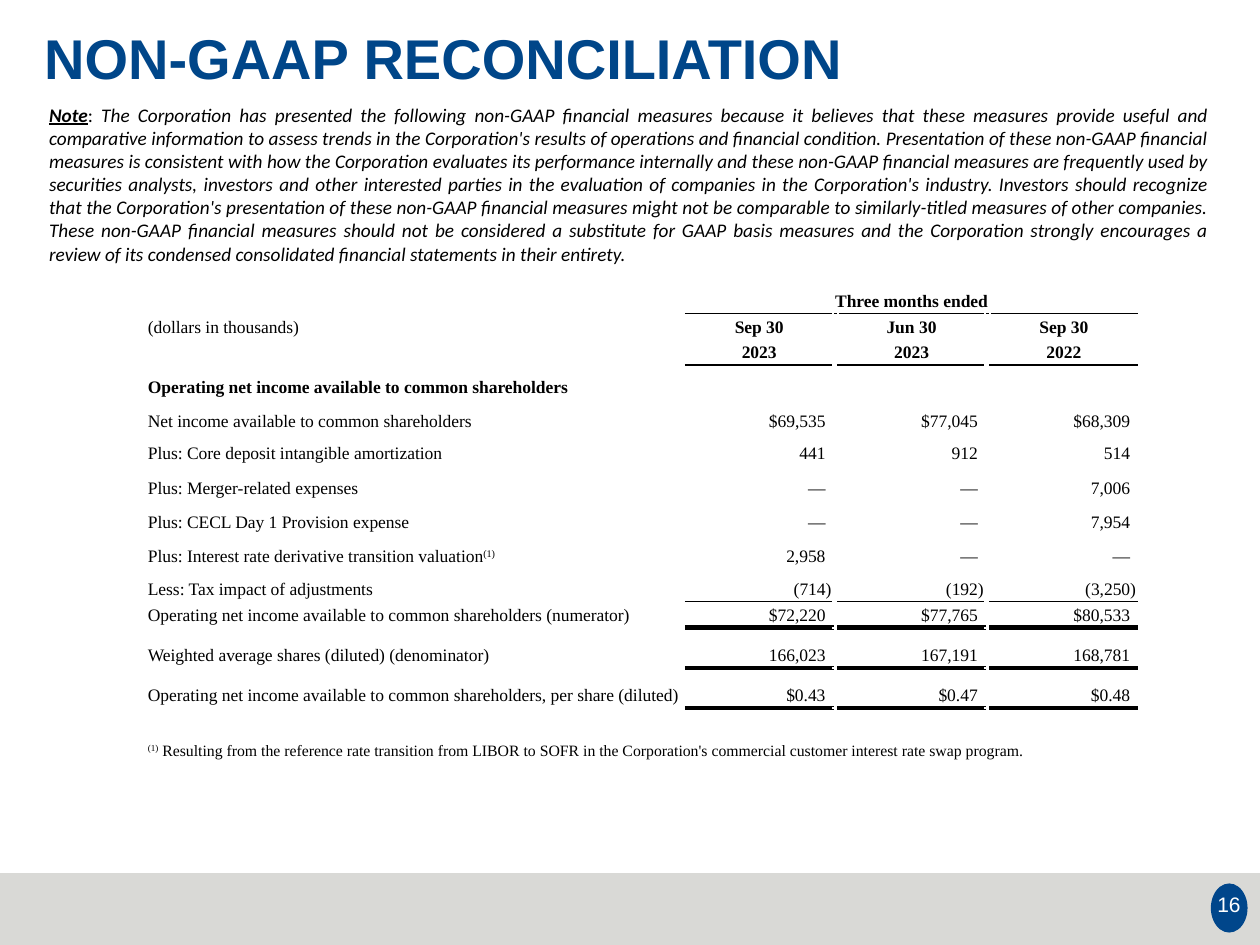
"""Builds the non-GAAP reconciliation slide with its table and footer."""
import pptx
import pptx.dml.color
import pptx.enum.shapes
import pptx.enum.text
import pptx.oxml
import pptx.oxml.ns
import pptx.util
from dataclasses import dataclass

Cm = pptx.util.Cm
Pt = pptx.util.Pt
ALIGN = pptx.enum.text.PP_ALIGN
ANCHOR = pptx.enum.text.MSO_ANCHOR
SHAPE = pptx.enum.shapes.MSO_SHAPE


@dataclass(frozen=True)
class Theme:
    title: str = "004689"
    badge: str = "00468B"
    footer: str = "D9D9D6"
    white: str = "FFFFFF"
    black: str = "000000"
    title_size: float = 32
    number_size: float = 12
    note_size: float = 11
    table_size: float = 10
    footnote_size: float = 9
    spacer_size: int = 1


THEME = Theme()


def add_run(p, text, face, size, color=THEME.black, bold=False, italic=False, underline=False, raised=False):
    """Append one formatted run to a paragraph."""
    r = p.add_run()
    r.text = text
    font = r.font
    font.name, font.size = face, Pt(size)
    font.bold, font.italic, font.underline = bold, italic, underline
    font.color.rgb = pptx.dml.color.RGBColor.from_string(color)
    if raised:
        r._r.get_or_add_rPr().set("baseline", "30000")


def add_box(s, left, top, width, height, align, anchor=ANCHOR.TOP):
    """Add a wrapping text box and return its first paragraph."""
    tf = s.shapes.add_textbox(Cm(left), Cm(top), Cm(width), Cm(height)).text_frame
    tf.word_wrap = True
    tf.vertical_anchor = anchor
    tf.margin_left = tf.margin_right = tf.margin_bottom = Cm(0.25)
    tf.margin_top = Cm(0.15)
    p = tf.paragraphs[0]
    p.alignment = align
    return p


prs = pptx.Presentation()
prs.slide_width, prs.slide_height = Cm(25.4), Cm(19.05)
s = prs.slides.add_slide(prs.slide_layouts[6])

for kind, color, left, top, width, height in [
    (SHAPE.RECTANGLE, THEME.footer, 0, 17.6, 25.4, 1.45),
    (SHAPE.OVAL, THEME.badge, 24.41, 17.81, 0.74, 0.99),
]:
    sp = s.shapes.add_shape(kind, Cm(left), Cm(top), Cm(width), Cm(height))
    sp.shadow.inherit = False
    sp.fill.solid()
    sp.fill.fore_color.rgb = pptx.dml.color.RGBColor.from_string(color)
    sp.line.fill.background()

p = add_box(s, 0.64, 0.48, 24.56, 2.9, ALIGN.LEFT)
p.line_spacing = 0.9
add_run(p, "NON-GAAP RECONCILIATION", "Arial", THEME.title_size, THEME.title, bold=True)

p = add_box(s, 24.18, 17.78, 1.19, 0.99, ALIGN.CENTER, ANCHOR.MIDDLE)
add_run(p, "16", "Arial", THEME.number_size, THEME.white)

NOTE_SENTENCES = [
    "The Corporation has presented the following non-GAAP financial measures because it believes that these "
    "measures provide useful and comparative information to assess trends in the Corporation's results of "
    "operations and financial condition.",
    "Presentation of these non-GAAP financial measures is consistent with how the Corporation evaluates its "
    "performance internally and these non-GAAP financial measures are frequently used by securities analysts, "
    "investors and other interested parties in the evaluation of companies in the Corporation's industry.",
    "Investors should recognize that the Corporation's presentation of these non-GAAP financial measures might "
    "not be comparable to similarly-titled measures of other companies.",
    "These non-GAAP financial measures should not be considered a substitute for GAAP basis measures and the "
    "Corporation strongly encourages a review of its condensed consolidated financial statements in their "
    "entirety.",
]
p = add_box(s, 0.74, 1.93, 23.9, 3.56, ALIGN.JUSTIFY)
add_run(p, "Note", "Calibri", THEME.note_size, bold=True, italic=True, underline=True)
add_run(p, ": ", "Calibri", THEME.note_size)
add_run(p, " ".join(NOTE_SENTENCES), "Calibri", THEME.note_size, italic=True)

OPERATING = "Operating net income available to common shareholders"
MARK = "(1)"
FOOTNOTE = (
    " Resulting from the reference rate transition from LIBOR to SOFR in the Corporation's "
    "commercial customer interest rate swap program."
)
ROWS = [
    (0.66, "", ["Three months ended", "", ""]),
    (0.53, "(dollars in thousands)", ["Sep 30", "Jun 30", "Sep 30"]),
    (0.51, "", ["2023", "2023", "2022"]),
    (0.69, OPERATING, ["", "", ""]),
    (0.69, "Net income available to common shareholders", ["$69,535", "$77,045", "$68,309"]),
    (0.66, "Plus: Core deposit intangible amortization", ["441", "912", "514"]),
    (0.69, "Plus: Merger-related expenses", ["—", "—", "7,006"]),
    (0.69, "Plus: CECL Day 1 Provision expense", ["—", "—", "7,954"]),
    (0.69, "Plus: Interest rate derivative transition valuation" + MARK, ["2,958", "—", "—"]),
    (0.66, "Less: Tax impact of adjustments", ["(714)", "(192)", "(3,250)"]),
    (0.53, OPERATING + " (numerator)", ["$72,220", "$77,765", "$80,533"]),
    (0.28, "", ["", "", ""]),
    (0.53, "Weighted average shares (diluted) (denominator)", ["166,023", "167,191", "168,781"]),
    (0.28, "", ["", "", ""]),
    (0.53, OPERATING + ", per share (diluted)", ["$0.43", "$0.47", "$0.48"]),
    (0.23, "", ["", "", ""]),
    (0.86, MARK + FOOTNOTE, ["", "", ""]),
]
COL_WIDTHS = [10.92] + [2.97, 0.1, 2.97, 0.1, 2.97]
HEADER_ROWS = 3
BOLD_ROWS = range(HEADER_ROWS + 1)
RULES = {0: 1, 2: 1, 9: 1, 10: 3, 12: 3, 14: 3}

heights = [row[0] for row in ROWS]
frame = s.shapes.add_table(len(ROWS), len(COL_WIDTHS), Cm(2.9), Cm(5.66), Cm(sum(COL_WIDTHS)), Cm(sum(heights)))
table = frame.table
table.first_row = table.horz_banding = False
for column, width in zip(table.columns, COL_WIDTHS):
    column.width = Cm(width)
for row, height in zip(table.rows, heights):
    row.height = Cm(height)
table.cell(0, 1).merge(table.cell(0, 5))
table.cell(len(ROWS) - 1, 0).merge(table.cell(len(ROWS) - 1, 5))

for i, (_, label, values) in enumerate(ROWS):
    texts = [label, values[0], "", values[1], "", values[2]]
    for j, text in enumerate(texts):
        cell = table.cell(i, j)
        is_figure = j > 0 and i >= HEADER_ROWS
        cell.vertical_anchor = ANCHOR.BOTTOM
        cell.margin_top = Cm(0)
        cell.margin_bottom = Cm(0.05) if text else Cm(0)
        cell.margin_left = Cm(0) if is_figure or not text else Cm(0.08)
        cell.margin_right = Cm(0.03 if text.endswith(")") else 0.15) if is_figure and text else cell.margin_left

        p = cell.text_frame.paragraphs[0]
        p.alignment = ALIGN.LEFT if j == 0 else ALIGN.RIGHT if is_figure else ALIGN.CENTER
        size = THEME.footnote_size if i == len(ROWS) - 1 else THEME.table_size
        bold = i in BOLD_ROWS and text != "(dollars in thousands)"
        before, mark, after = text.partition(MARK)
        for part in filter(None, (before, mark, after)):
            add_run(p, part, "Times New Roman", size, bold=bold, raised=part == MARK)
        if not text:
            end = pptx.oxml.parse_xml(f'<a:endParaRPr {pptx.oxml.ns.nsdecls("a")} sz="{THEME.spacer_size * 100}"/>')
            p._p.append(end)

        tcPr = cell._tc.get_or_add_tcPr()
        for edge, above in [("L", None), ("R", None), ("T", i - 1), ("B", i)]:
            ruled = above in RULES and (j % 2 == 1 or above == 0 and j > 0)
            color = THEME.black if ruled else THEME.white
            weight = Pt(RULES[above] if ruled else 1)
            tcPr.append(pptx.oxml.parse_xml(
                f'<a:ln{edge} {pptx.oxml.ns.nsdecls("a")} w="{weight}">'
                f'<a:solidFill><a:srgbClr val="{color}"/></a:solidFill></a:ln{edge}>'))
        cell.fill.background()

prs.save("out.pptx")
